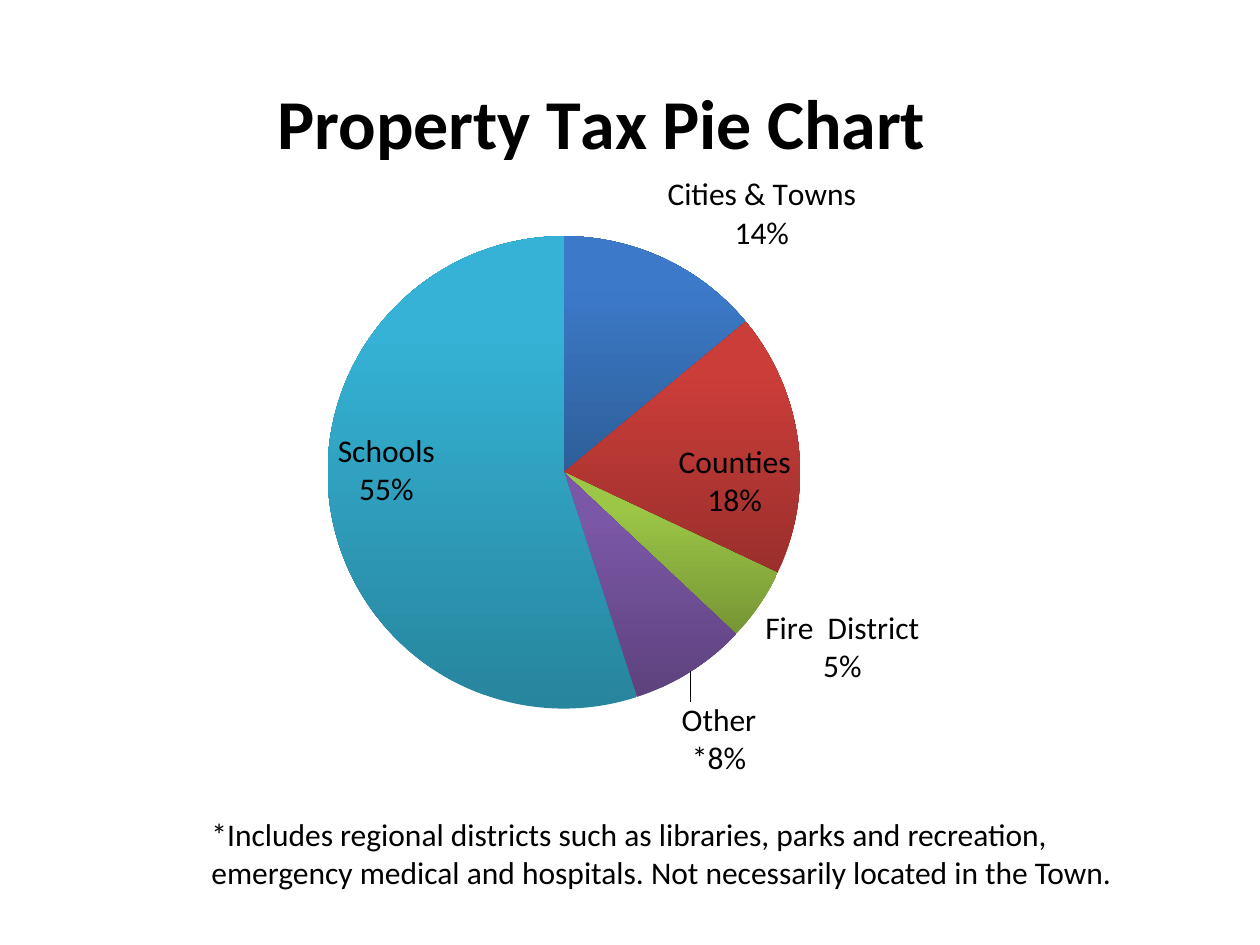
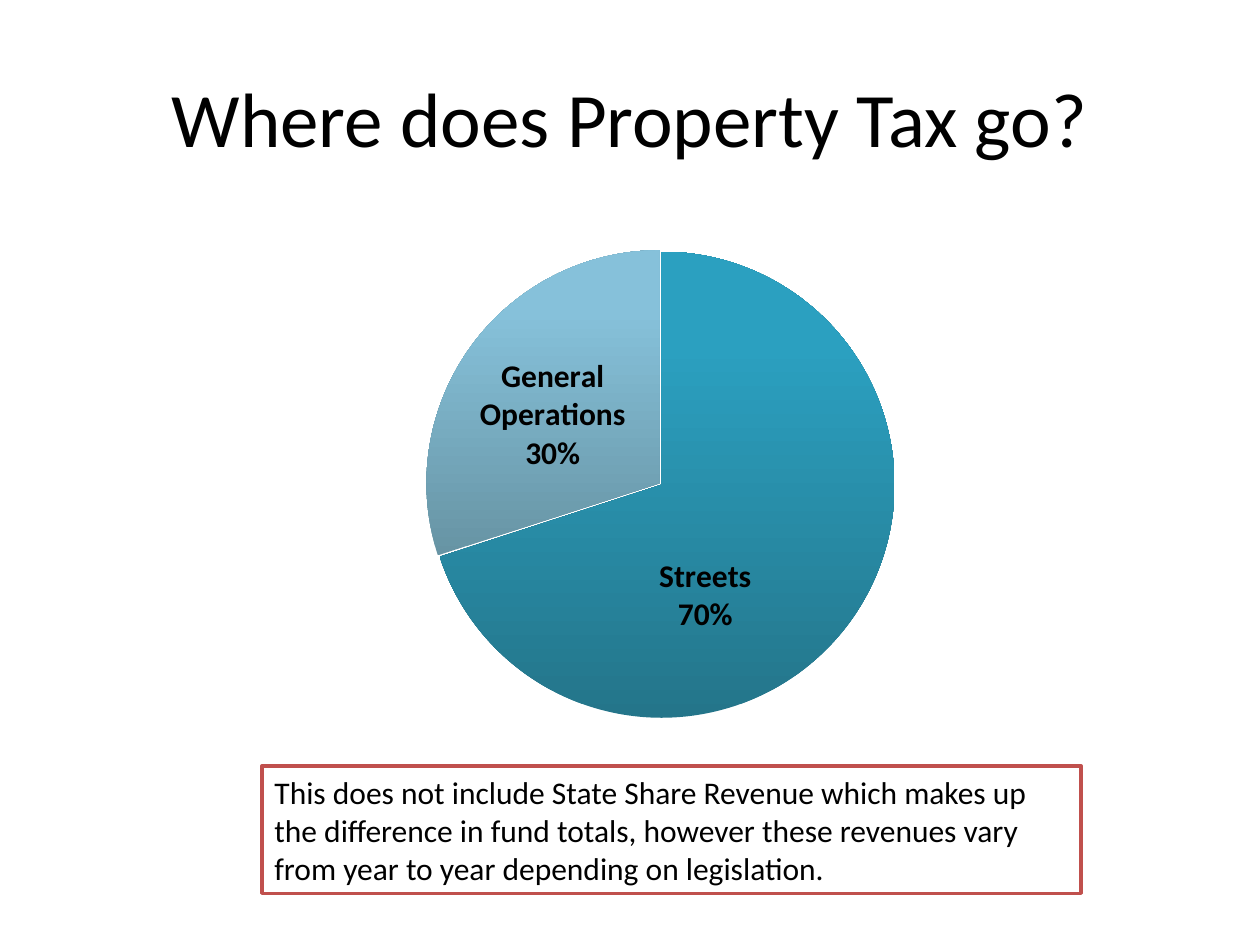
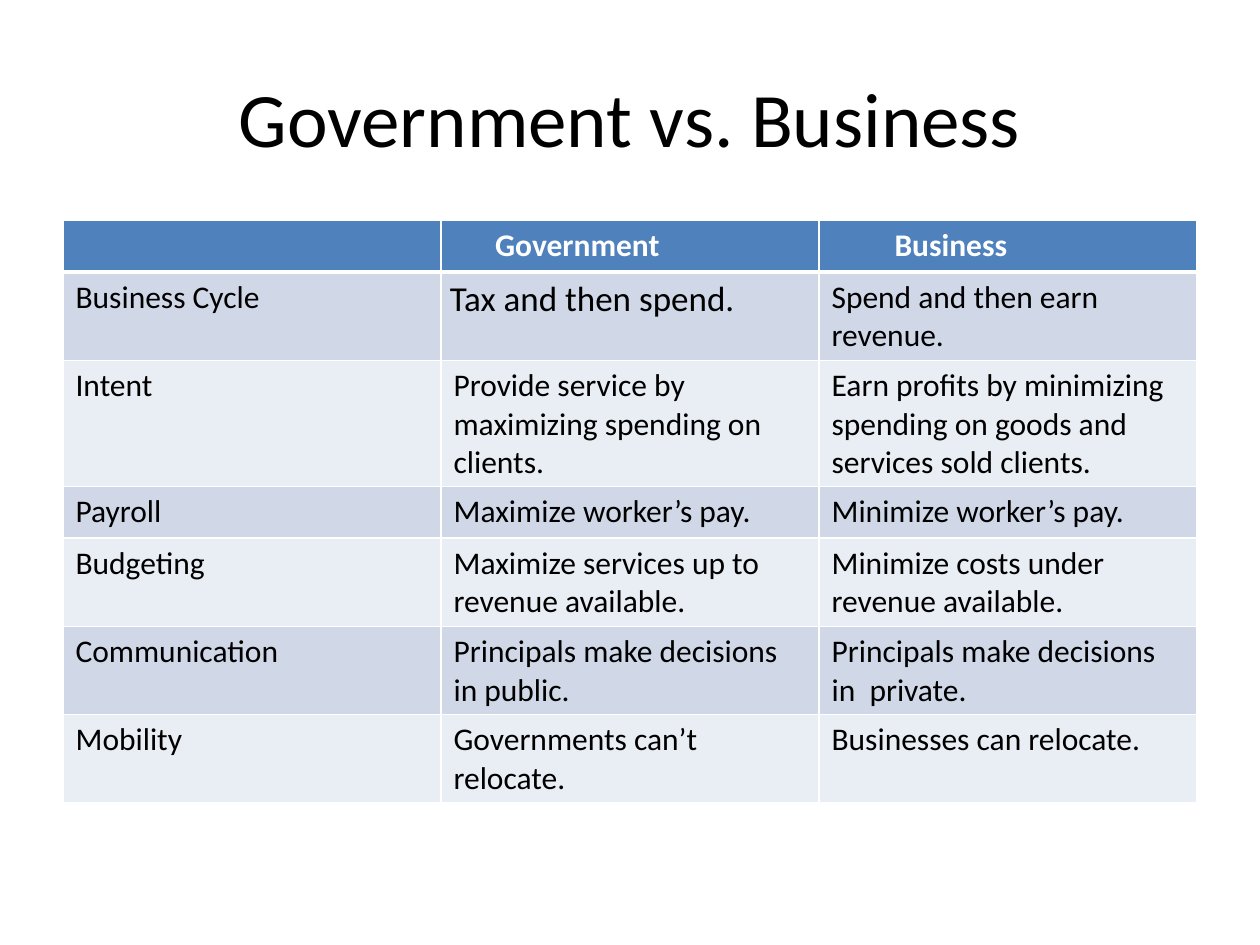
"""Build three slides on property tax and on government against business."""
from pptx import Presentation
from pptx.chart.data import CategoryChartData
from pptx.dml.color import RGBColor
from pptx.enum.chart import XL_CHART_TYPE, XL_LABEL_POSITION
from pptx.enum.shapes import MSO_SHAPE
from pptx.enum.text import MSO_ANCHOR, PP_ALIGN
from pptx.oxml import parse_xml
from pptx.oxml.ns import nsdecls
from pptx.util import Pt

SCALE = 9144
FONT = "Calibri"
BLACK = RGBColor(0x00, 0x00, 0x00)
WHITE = RGBColor(0xFF, 0xFF, 0xFF)
BLUE = RGBColor(0x4F, 0x81, 0xBD)
RED = RGBColor(0xC0, 0x50, 0x4D)
BANDS = (RGBColor(0xE9, 0xED, 0xF4), RGBColor(0xD0, 0xD8, 0xE8))
NAVY = (RGBColor(0x2D, 0x5F, 0x99), RGBColor(0x3C, 0x7A, 0xC9))
BRICK = (RGBColor(0x9A, 0x2F, 0x2C), RGBColor(0xCB, 0x3D, 0x39))
LIME = (RGBColor(0x76, 0x95, 0x35), RGBColor(0x9C, 0xC7, 0x46))
PLUM = (RGBColor(0x5D, 0x42, 0x7D), RGBColor(0x7B, 0x57, 0xA7))
AQUA = (RGBColor(0x27, 0x85, 0x9D), RGBColor(0x35, 0xB2, 0xD5))
TEAL = (RGBColor(0x24, 0x75, 0x8A), RGBColor(0x2B, 0xA0, 0xC0))
SKY = (RGBColor(0x67, 0x94, 0xA4), RGBColor(0x86, 0xC1, 0xDA))
OUT = XL_LABEL_POSITION.OUTSIDE_END
IN = XL_LABEL_POSITION.INSIDE_END
MID = XL_LABEL_POSITION.CENTER


def px(count):
    """Turn px into EMU."""
    return count * SCALE


def style(font, size=18, color=BLACK, bold=False):
    """Set the face, size, colour and weight of a font."""
    font.name, font.size, font.bold = FONT, Pt(size), bold
    font.color.rgb = color


def write(frame, text, align=None, anchor=None, space=None, **look):
    """Fill a text frame, one paragraph a line."""
    frame.word_wrap = True
    if anchor is not None:
        frame.vertical_anchor = anchor
    for i, line in enumerate(text.split("\n")):
        para = frame.add_paragraph() if i else frame.paragraphs[0]
        para.alignment, para.line_spacing = align, space
        run = para.add_run()
        run.text = line
        style(run.font, **look)


def place(node, after, **spots):
    """Give a chart node a manual layout, behind the named child."""
    for old in node.xpath("./c:layout"):
        node.remove(old)
    marks = "".join(f'<c:{key} val="{val}"/>' for key, val in spots.items())
    layout = parse_xml(f"<c:layout {nsdecls('c')}><c:manualLayout>{marks}"
                       "</c:manualLayout></c:layout>")
    if after:
        node.xpath(f"./c:{after}")[0].addnext(layout)
    else:
        node.insert(0, layout)


def edge(cell, low):
    """Draw white borders round a cell, with the given width below."""
    props = cell._tc.get_or_add_tcPr()
    for i, (side, wide) in enumerate(zip("LRTB", (1, 1, 1, low))):
        props.insert(i, parse_xml(
            f'<a:ln{side} {nsdecls("a")} w="{Pt(wide)}"><a:solidFill>'
            f'<a:srgbClr val="{WHITE}"/></a:solidFill></a:ln{side}>'))


class Deck:
    """Hold the style and the current slide."""

    def __init__(self):
        """Open an empty deck of 1000 by 750 px."""
        self.show = Presentation()
        self.show.slide_width, self.show.slide_height = px(1000), px(750)
        self.slide = None

    def page(self, title=None):
        """Start a slide, with a title if one is given."""
        self.slide = self.show.slides.add_slide(self.show.slide_layouts[6])
        if title:
            self.text((50, 30, 900, 125), title, size=44,
                      align=PP_ALIGN.CENTER, anchor=MSO_ANCHOR.MIDDLE)

    def text(self, area, words, **look):
        """Add a text box."""
        box = self.slide.shapes.add_textbox(*map(px, area))
        write(box.text_frame, words, **look)

    def panel(self, area, words):
        """Add a white box with a red outline."""
        box = self.slide.shapes.add_shape(MSO_SHAPE.RECTANGLE, *map(px, area))
        box.shadow.inherit = False
        box.fill.solid()
        box.fill.fore_color.rgb = WHITE
        box.line.color.rgb, box.line.width = RED, Pt(2)
        write(box.text_frame, words, align=PP_ALIGN.LEFT,
              anchor=MSO_ANCHOR.MIDDLE)

    def pie(self, area, name, parts, plot, title=None, bold=False):
        """Add a pie from parts of name, value, tones, spot, shift, label and burst."""
        data = CategoryChartData()
        data.categories = [part["name"] for part in parts]
        data.add_series(name, [part["value"] for part in parts])
        chart = self.slide.shapes.add_chart(
            XL_CHART_TYPE.PIE, *map(px, area), data).chart
        style(chart.font)
        chart.has_legend = False
        chart.has_title = bool(title)
        if title:
            write(chart.chart_title.text_frame, name, size=40, bold=True)
            place(chart.element.xpath(".//c:title")[0], "tx",
                  xMode="edge", yMode="edge", **title)
        chart.plots[0].vary_by_categories = True
        place(chart.element.xpath(".//c:plotArea")[0], None,
              layoutTarget="inner", xMode="edge", yMode="edge", **plot)
        series = chart.plots[0].series[0]
        labels = series.data_labels
        style(labels.font, bold=bold)
        labels.show_value = False
        labels.show_category_name = labels.show_percentage = True
        for i, part in enumerate(parts):
            self.slice(series.points[i], part, bold)
        for node in chart.element.xpath(".//c:ser/c:dLbls/c:dLbl"):
            for key, val in (("Val", 0), ("CatName", 1), ("Percent", 1)):
                node.xpath(f"./c:show{key}")[0].set("val", str(val))
            shift = parts[int(node.xpath("./c:idx/@val")[0])].get("shift")
            if shift:
                place(node, "idx", x=shift[0], y=shift[1])
        for node in chart.element.xpath(".//c:ser//c:showBubbleSize"):
            node.addnext(parse_xml(
                f"<c:separator {nsdecls('c')}>\n</c:separator>"))

    def slice(self, point, part, bold):
        """Paint one slice and set its label."""
        fill = point.format.fill
        fill.gradient()
        fill.gradient_angle = 90
        for stop, tone, spot in zip(fill.gradient_stops, part["tones"], (0, 0.8)):
            stop.color.rgb, stop.position = tone, spot
        point.format.line.fill.background()
        label = point.data_label
        if "label" in part:
            write(label.text_frame, part["label"], bold=bold)
        else:
            style(label.font, bold=bold)
        label.position = part["spot"]
        if "burst" in part:
            shape = point.format.fill._xPr
            shape.addprevious(parse_xml(
                f'<c:explosion {nsdecls("c")} val="{part["burst"]}"/>'))

    def table(self, area, rows, high, special):
        """Add a banded table; special maps a cell to its margins and format."""
        frame = self.slide.shapes.add_table(
            len(rows), len(rows[0]), *map(px, area))
        for r, row in enumerate(rows):
            frame.table.rows[r].height = px(high)
            for c, words in enumerate(row):
                cell = frame.table.cell(r, c)
                sides, look = special.get((r, c), ({}, {}))
                for side, size in sides.items():
                    setattr(cell, f"margin_{side}", px(size))
                cell.fill.solid()
                cell.fill.fore_color.rgb = BANDS[r % 2] if r else BLUE
                edge(cell, 1 if r else 3)
                if words:
                    write(cell.text_frame, words, bold=not r,
                          color=BLACK if r else WHITE, **look)
        frame.height = px(area[3])


def main():
    """Build and save the deck."""
    deck = Deck()

    deck.page()
    deck.pie((0, 0, 1000, 625), "Property Tax Pie Chart", [
        dict(name="Cities & Towns", value=14, tones=NAVY, spot=OUT),
        dict(name="Counties", value=18, tones=BRICK, spot=IN),
        dict(name="Fire  District", value=5, tones=LIME, spot=OUT),
        dict(name="Other", value=8, tones=PLUM, spot=OUT,
             shift=(-0.01, 0.03), label="Other\n*8%"),
        dict(name="Schools", value=55, tones=AQUA, spot=IN),
    ], dict(x=0.26, y=0.3, w=0.375, h=0.6), title=dict(x=0.21, y=0.08))
    deck.text((158, 642, 767, 101),
              "*Includes regional districts such as libraries, parks and "
              "recreation, emergency medical and hospitals. Not necessarily "
              "located in the Town.")

    deck.page("Where does Property Tax go?")
    deck.pie((0, 133, 1000, 475), "Series 1", [
        dict(name="Streets", value=70, tones=TEAL, spot=MID,
             shift=(-0.04, 0.07)),
        dict(name="General Operations", value=30, tones=SKY, spot=MID,
             shift=(-0.01, 0), burst=1),
    ], dict(x=0.34, y=0.14, w=0.37, h=0.78), bold=True)
    deck.panel((208, 608, 650, 101),
               "This does not include State Share Revenue which makes up the "
               "difference in fund totals, however these revenues vary from "
               "year to year depending on legislation.")

    deck.page("Government vs. Business")
    deck.table((50, 175, 900, 461), [
        ("", "Government", "Business"),
        ("Business Cycle", "Tax and then spend.",
         "Spend and then earn revenue."),
        ("Intent", "Provide service by maximizing spending on clients.",
         "Earn profits by minimizing spending on goods and services sold "
         "clients."),
        ("Payroll", "Maximize worker’s pay.", "Minimize worker’s pay."),
        ("Budgeting", "Maximize services up to revenue available.",
         "Minimize costs under revenue available."),
        ("Communication", "Principals make decisions in public.",
         "Principals make decisions in  private."),
        ("Mobility", "Governments can’t relocate.",
         "Businesses can relocate."),
    ], 41, {
        (0, 1): (dict(left=43), {}),
        (0, 2): (dict(left=60), {}),
        (1, 1): (dict(left=7, right=7, top=0, bottom=0),
                 dict(size=20, space=1.15)),
    })
    deck.show.save("out.pptx")


if __name__ == "__main__":
    main()
